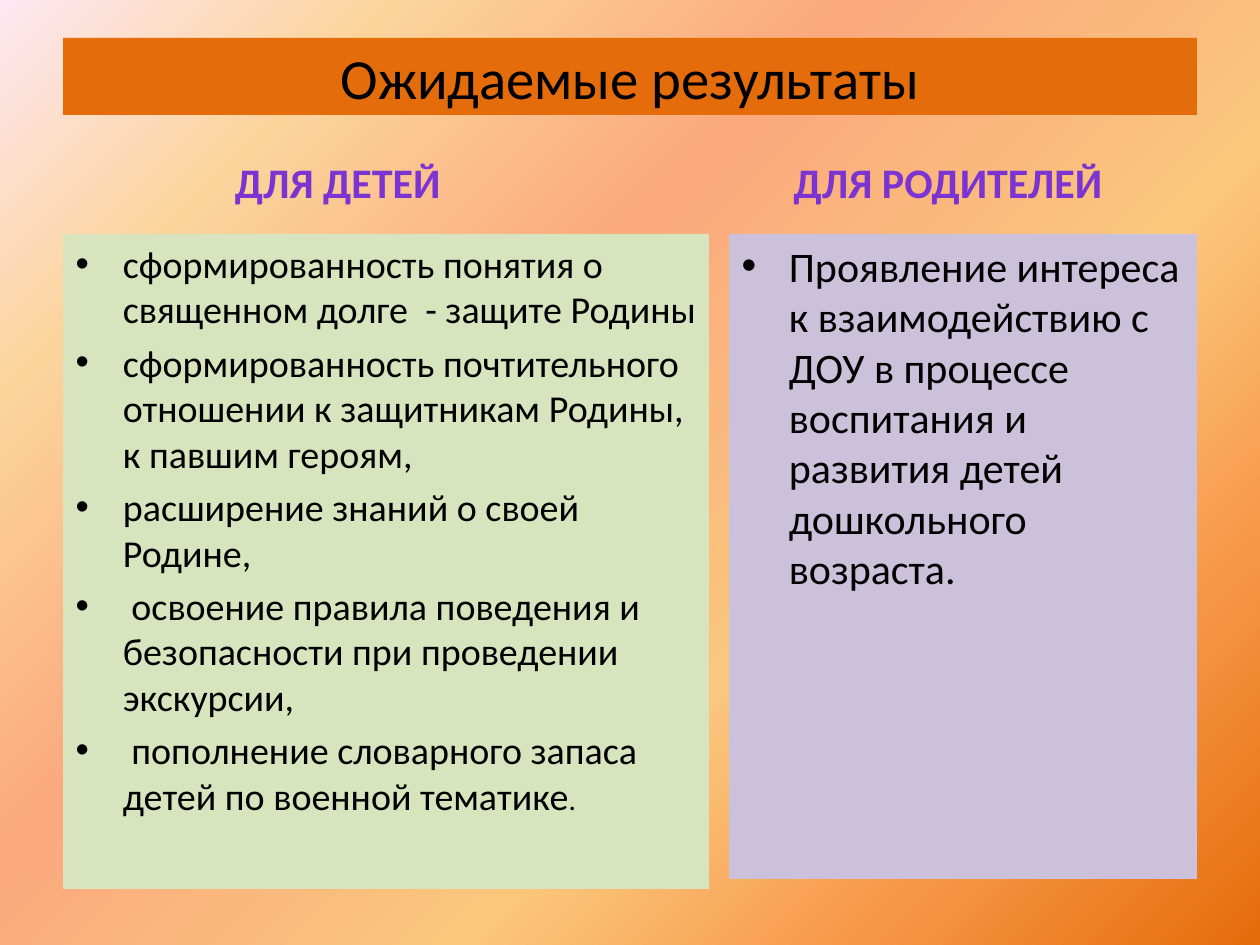
from lxml.etree import SubElement
from pptx import Presentation
from pptx.dml.color import RGBColor
from pptx.enum.text import MSO_ANCHOR, MSO_AUTO_SIZE, PP_ALIGN
from pptx.oxml.ns import qn
from pptx.util import Emu, Pt

PX = 914400 / 126
FONT = "Calibri"
BLACK = RGBColor(0x00, 0x00, 0x00)
ORANGE = RGBColor(0xE4, 0x6C, 0x0A)
GREEN = RGBColor(0xD7, 0xE4, 0xBD)
LILAC = RGBColor(0xCC, 0xC1, 0xDA)
OUTLINE = RGBColor(0x5E, 0x45, 0x7C)
DARK_VIOLET = RGBColor(0x3D, 0x1B, 0x67)
SUNSET = [
    (0, ORANGE),
    (18, RGBColor(0xF7, 0x96, 0x46)),
    (36, RGBColor(0xFA, 0xC7, 0x7D)),
    (61, RGBColor(0xFB, 0xA9, 0x7D)),
    (82, RGBColor(0xFB, 0xD4, 0x9C)),
    (100, RGBColor(0xFE, 0xE7, 0xF2)),
]
VIOLET = [
    (0, DARK_VIOLET),
    (43, RGBColor(0x7B, 0x34, 0xD2)),
    (48, RGBColor(0x73, 0x30, 0xC4)),
    (100, DARK_VIOLET),
]
CHILDREN_RESULTS = [
    "сформированность понятия о священном долге  - защите Родины",
    "сформированность почтительного отношении к защитникам Родины, к павшим героям,",
    "расширение знаний о своей Родине,",
    " освоение правила поведения и безопасности при проведении экскурсии,",
    " пополнение словарного запаса детей по военной тематике",
]
PARENT_RESULTS = [
    "Проявление интереса к взаимодействию с ДОУ в процессе воспитания "
    "и развития детей дошкольного возраста.",
]


def px(value):
    """Turn pixels into EMU."""
    return Emu(round(value * PX))


def add_gradient(solid, stops):
    """Replace a solid fill element with a gradient and return it."""
    gradient = solid.makeelement(qn("a:gradFill"), {"rotWithShape": "1"})
    stop_list = SubElement(gradient, qn("a:gsLst"))
    for position, color in stops:
        stop = SubElement(stop_list, qn("a:gs"), pos=str(position * 1000))
        SubElement(stop, qn("a:srgbClr"), val=str(color))
    solid.getparent().replace(solid, gradient)
    return gradient


def paint_background(page):
    """Give the page a gradient that spreads from its lower right corner."""
    page.background.fill.solid()
    solid = page.element.find(".//" + qn("p:bgPr")).find(qn("a:solidFill"))
    path = SubElement(add_gradient(solid, SUNSET), qn("a:path"), path="circle")
    SubElement(path, qn("a:fillToRect"), l="100000", t="100000")


def place(box, left, top, width, height, fill=None):
    """Move a placeholder and fill it if a colour is given."""
    box.left, box.top = px(left), px(top)
    box.width, box.height = px(width), px(height)
    box.text_frame.word_wrap = True
    box.text_frame.auto_size = MSO_AUTO_SIZE.NONE
    if fill is not None:
        box.fill.solid()
        box.fill.fore_color.rgb = fill


def format_span(span, size, color=BLACK):
    """Set the font of one run."""
    span.font.name = FONT
    span.font.size = Pt(size)
    span.font.color.rgb = color


def set_title(box, text):
    """Write the slide title."""
    box.text_frame.text = text
    box.text_frame.vertical_anchor = MSO_ANCHOR.MIDDLE
    para = box.text_frame.paragraphs[0]
    para.alignment = PP_ALIGN.CENTER
    format_span(para.runs[0], 32.4)


def set_heading(box, text):
    """Write an outlined violet column heading."""
    box.text_frame.text = text
    box.text_frame.vertical_anchor = MSO_ANCHOR.BOTTOM
    para = box.text_frame.paragraphs[0]
    para.alignment = PP_ALIGN.CENTER
    span = para.runs[0]
    format_span(span, 24, DARK_VIOLET)
    span.font.bold = True
    properties = span.font.fill and para.runs[0]._r.rPr
    gradient = add_gradient(properties.find(qn("a:solidFill")), VIOLET)
    SubElement(gradient, qn("a:lin"), ang="5400000")
    line = properties.makeelement(qn("a:ln"), {"w": str(Pt(0.71))})
    color = SubElement(SubElement(line, qn("a:solidFill")), qn("a:srgbClr"))
    color.set("val", str(OUTLINE))
    properties.insert(0, line)


def set_list(box, items, size):
    """Write the bulleted results of one column."""
    box.text_frame.text = "\n".join(items)
    for para in box.text_frame.paragraphs:
        format_span(para.runs[0], size)


def main():
    """Build the slide of expected results."""
    deck = Presentation()
    deck.slide_width, deck.slide_height = px(1260), px(945)
    page = deck.slides.add_slide(deck.slide_layouts[4])
    paint_background(page)
    title, left_head, left_list, right_head, right_list = page.placeholders

    place(title, 63, 38, 1134, 77, ORANGE)
    set_title(title, "Ожидаемые результаты")
    place(left_head, 64, 125, 557, 88)
    set_heading(left_head, "ДЛЯ ДЕТЕЙ ")
    place(left_list, 63, 234, 646, 655, GREEN)
    set_list(left_list, CHILDREN_RESULTS, 21.7)
    full_stop = left_list.text_frame.paragraphs[-1].add_run()
    full_stop.text = "."
    format_span(full_stop, 16.8)
    place(right_head, 699, 125, 498, 88)
    set_heading(right_head, "ДЛЯ РОДИТЕЛЕЙ")
    place(right_list, 729, 234, 468, 645, LILAC)
    set_list(right_list, PARENT_RESULTS, 24)

    deck.save("out.pptx")


if __name__ == "__main__":
    main()
